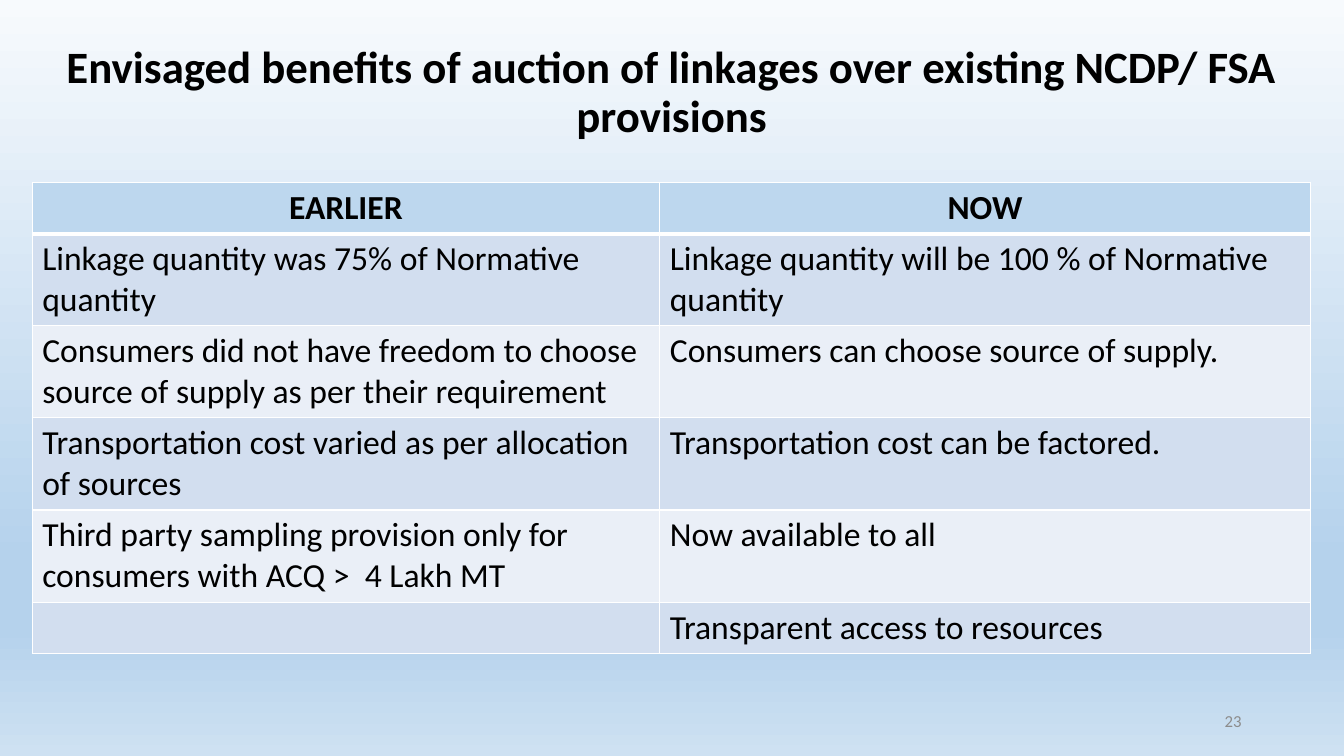
from lxml import etree
from pptx import Presentation
from pptx.dml.color import RGBColor
from pptx.enum.text import MSO_ANCHOR, PP_ALIGN
from pptx.oxml.ns import qn
from pptx.util import Pt

CENTER, LEFT, RIGHT = PP_ALIGN.CENTER, PP_ALIGN.LEFT, PP_ALIGN.RIGHT
MIDDLE = MSO_ANCHOR.MIDDLE
TITLE_ONLY = 5
FONT = "Calibri"
COLORS = {
    "text": "000000",
    "number": "8C8C8C",
    "border": "FFFFFF",
    "header": "BDD7EE",
    "odd": "D2DEEF",
    "even": "EAEFF7",
}
BACKGROUND_STOPS = [(0, "F7FAFD"), (74, "B5D2EC"), (83, "B5D2EC"), (100, "CEE1F2")]
TITLE = "Envisaged benefits of auction of linkages over existing NCDP/ FSA provisions"
COMPARISON = [
    ("EARLIER", "NOW"),
    ("Linkage quantity was 75% of Normative quantity",
     "Linkage quantity will be 100 % of Normative quantity"),
    ("Consumers did not have freedom to choose source of supply as per their requirement",
     "Consumers can choose source of supply."),
    ("Transportation cost varied as per allocation of sources",
     "Transportation cost can be factored."),
    ("Third party sampling provision only for consumers with ACQ >  4 Lakh MT",
     "Now available to all"),
    ("", "Transparent access to resources"),
]
ROW_HEIGHTS = [36.6, 65.8, 65.8, 65.8, 65.8, 36.6]
FIRST_COLUMN_SHARE = 0.491


def write(frame, text, size, color="text", bold=False, align=LEFT):
    para = frame.paragraphs[0]
    para.alignment = align
    para.font.size = Pt(size)
    if text:
        span = para.add_run()
        span.text = text
        span.font.name = FONT
        span.font.size = Pt(size)
        span.font.bold = bold
        span.font.color.rgb = RGBColor.from_string(COLORS[color])
    return para


def paint_background(page):
    fill = page.background.fill
    fill.gradient()
    fill.gradient_angle = 270
    stops = next(page.element.iter(qn("a:gsLst")))
    for stop in list(stops):
        stops.remove(stop)
    for percent, color in BACKGROUND_STOPS:
        stop = etree.SubElement(stops, qn("a:gs"), pos=str(percent * 1000))
        etree.SubElement(stop, qn("a:srgbClr"), val=color)


def add_title(page, left, top, width, height):
    title = page.shapes.title
    title.left, title.top, title.width, title.height = map(Pt, (left, top, width, height))
    title.text_frame.vertical_anchor = MIDDLE
    para = write(title.text_frame, TITLE, 32, bold=True, align=CENTER)
    para.line_spacing = 0.9


def set_borders(cell, widths):
    properties = cell._tc.get_or_add_tcPr()
    for side, width in zip("LRTB", widths):
        line = etree.SubElement(properties, qn(f"a:ln{side}"), w=str(Pt(width)))
        fill = etree.SubElement(line, qn("a:solidFill"))
        etree.SubElement(fill, qn("a:srgbClr"), val=COLORS["border"])


def add_comparison(page, left, top, width):
    frame = page.shapes.add_table(
        len(COMPARISON), 2, Pt(left), Pt(top), Pt(width), Pt(sum(ROW_HEIGHTS)))
    table = frame.table
    for column, share in zip(table.columns, (FIRST_COLUMN_SHARE, 1 - FIRST_COLUMN_SHARE)):
        column.width = Pt(width * share)
    for index, (texts, height) in enumerate(zip(COMPARISON, ROW_HEIGHTS)):
        header = index == 0
        table.rows[index].height = Pt(height)
        shade = "header" if header else "odd" if index % 2 else "even"
        borders = (1, 1, 3 if index == 1 else 1, 3 if header else 1)
        for cell, text in zip(table.rows[index].cells, texts):
            write(cell.text_frame, text, 24, bold=header, align=CENTER if header else LEFT)
            set_borders(cell, borders)
            cell.fill.solid()
            cell.fill.fore_color.rgb = RGBColor.from_string(COLORS[shade])


def add_page_number(page, left, top, width, height):
    box = page.shapes.add_textbox(Pt(left), Pt(top), Pt(width), Pt(height))
    box.text_frame.word_wrap = True
    box.text_frame.vertical_anchor = MIDDLE
    write(box.text_frame, "23", 12, "number", align=RIGHT)


def main():
    deck = Presentation()
    deck.slide_width, deck.slide_height = Pt(960), Pt(540)
    page = deck.slides.add_slide(deck.slide_layouts[TITLE_ONLY])
    paint_background(page)
    add_title(page, 8.6, 26.6, 942.5, 80.6)
    add_comparison(page, 23, 130.3, 913)
    add_page_number(page, 678, 500.5, 216, 28.8)
    deck.save("out.pptx")


if __name__ == "__main__":
    main()
